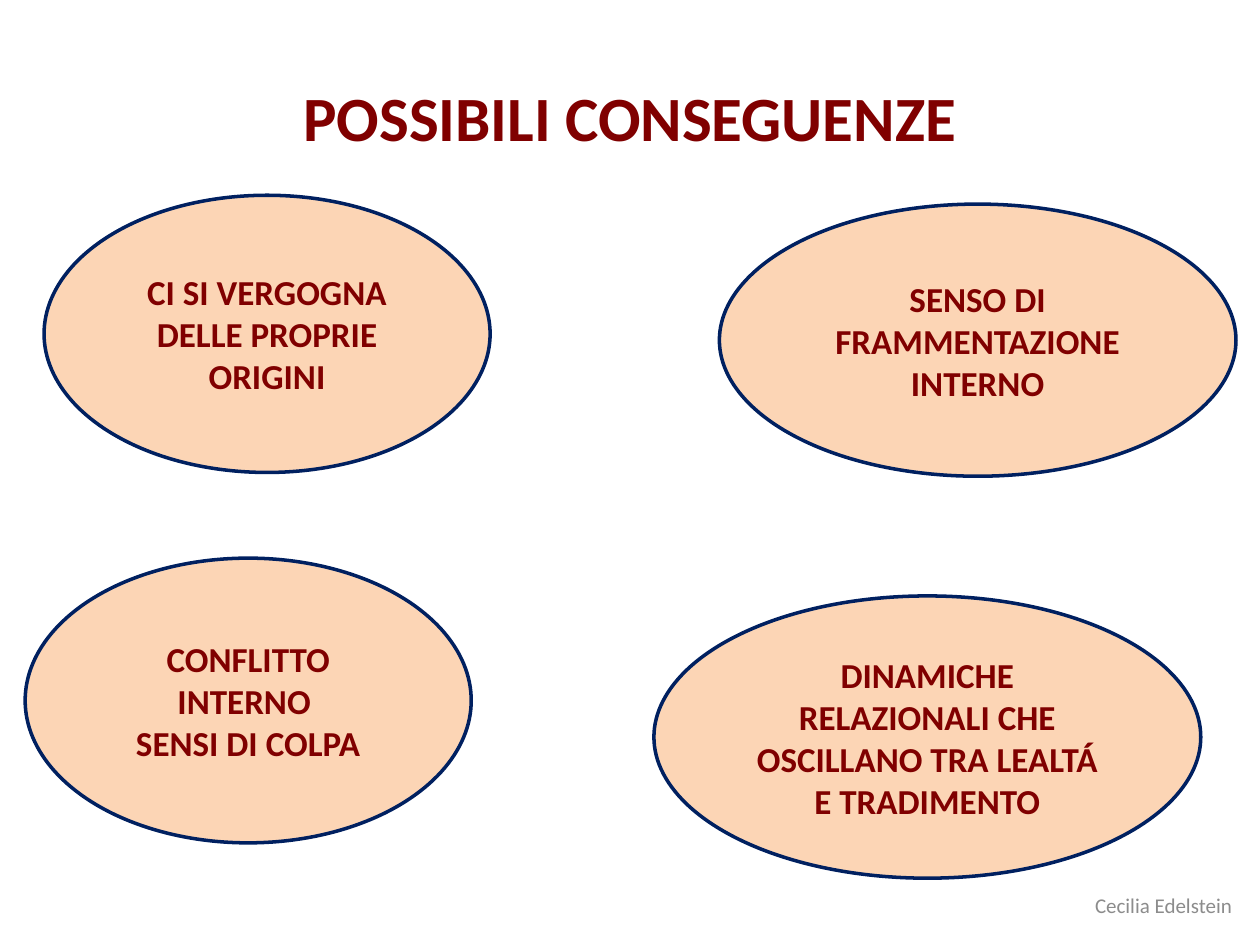
import pptx
import pptx.util
import pptx.dml.color
import pptx.enum.shapes
import pptx.enum.text

Inches = pptx.util.Inches
Pt = pptx.util.Pt
RGBColor = pptx.dml.color.RGBColor

MAROON = RGBColor(0x80, 0x00, 0x00)
PEACH = RGBColor(0xFC, 0xD5, 0xB5)
NAVY = RGBColor(0x00, 0x20, 0x60)
GREY = RGBColor(0x8C, 0x8C, 0x8C)


def write(shape, lines, size, color, bold):
    """Fill a shape with centred paragraphs, one for each line."""
    frame = shape.text_frame
    frame.word_wrap = True
    frame.vertical_anchor = pptx.enum.text.MSO_ANCHOR.MIDDLE
    for i, line in enumerate(lines):
        para = frame.add_paragraph() if i else frame.paragraphs[0]
        para.alignment = pptx.enum.text.PP_ALIGN.CENTER
        run = para.add_run()
        run.text = line
        run.font.name = "Calibri"
        run.font.size = Pt(size)
        run.font.bold = bold
        run.font.color.rgb = color


deck = pptx.Presentation()
deck.slide_width = Inches(10)
deck.slide_height = Inches(7.5)
slide = deck.slides.add_slide(deck.slide_layouts[5])

title = slide.shapes.title
title.left, title.top = Inches(0.5), Inches(0.3)
title.width, title.height = Inches(9), Inches(1.25)
write(title, ["POSSIBILI CONSEGUENZE"], 36, MAROON, True)

effects = [
    (0.35, 1.55, 3.54, 2.2, ["CI SI VERGOGNA DELLE PROPRIE ORIGINI"]),
    (5.71, 1.62, 4.1, 2.16, ["SENSO DI FRAMMENTAZIONE INTERNO"]),
    (0.2, 4.43, 3.54, 2.26, ["CONFLITTO INTERNO ", "SENSI DI COLPA"]),
    (5.19, 4.73, 4.34, 2.24,
     ["DINAMICHE RELAZIONALI CHE OSCILLANO TRA LEALTÁ E TRADIMENTO"]),
]
for left, top, width, height, lines in effects:
    oval = slide.shapes.add_shape(
        pptx.enum.shapes.MSO_SHAPE.OVAL,
        Inches(left), Inches(top), Inches(width), Inches(height))
    oval.shadow.inherit = False
    oval.fill.solid()
    oval.fill.fore_color.rgb = PEACH
    oval.line.color.rgb = NAVY
    oval.line.width = Pt(2)
    write(oval, lines, 20, MAROON, True)

author = slide.shapes.add_textbox(
    Inches(8.47), Inches(7.06), Inches(1.53), Inches(0.24))
write(author, ["Cecilia Edelstein"], 12, GREY, False)

deck.save("out.pptx")
